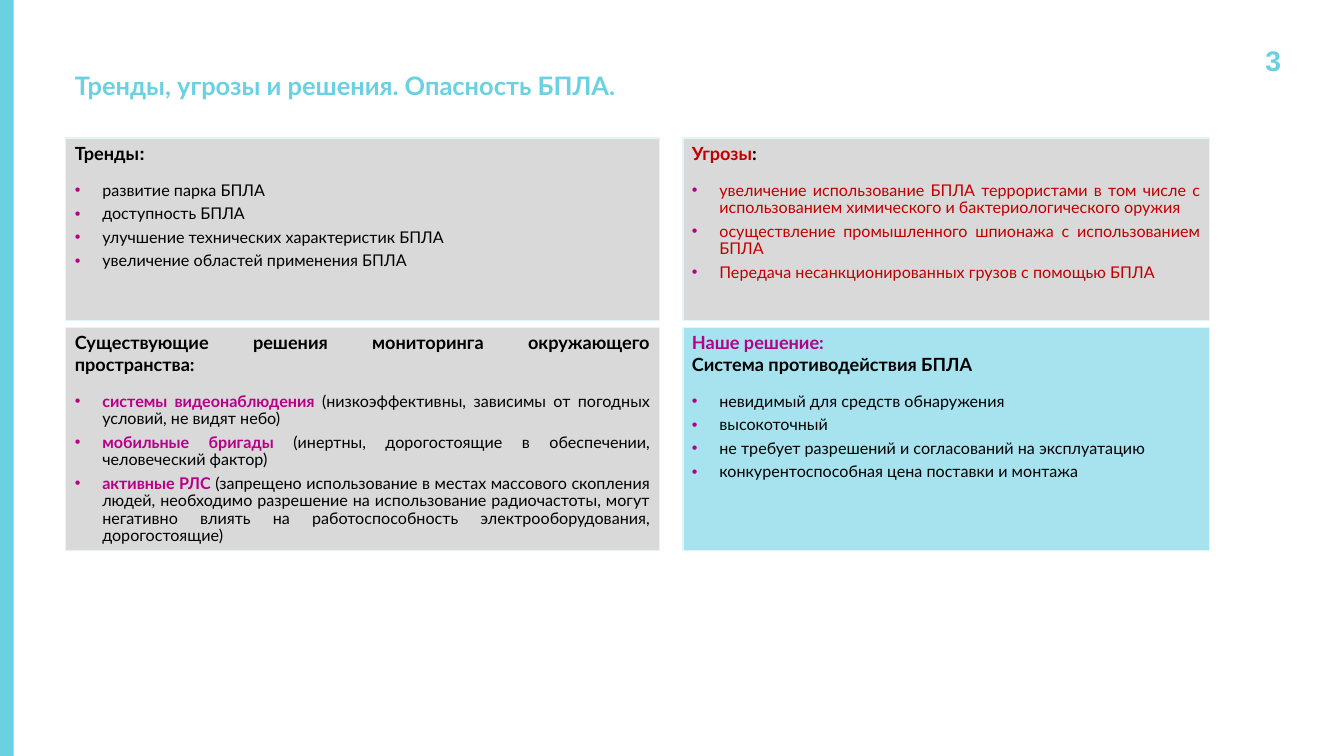
from lxml import etree
from pptx import Presentation
from pptx.dml.color import RGBColor
from pptx.enum import shapes, text
from pptx.oxml.ns import qn
from pptx.util import Inches, Pt

CYAN = RGBColor(0x6A, 0xD1, 0xE2)
LIGHT_CYAN = RGBColor(0xA6, 0xE3, 0xEE)
PALE_CYAN = RGBColor(0xE1, 0xF6, 0xF9)
GREY = RGBColor(0xD9, 0xD9, 0xD9)
MAGENTA = RGBColor(0xB7, 0x00, 0x88)
RED = RGBColor(0xC0, 0x00, 0x00)
BLACK = RGBColor(0, 0, 0)

WIDTH, HEIGHT = 14.7, 8.27
HEADING_SIZE, ITEM_SIZE = 14.3, 12.7
JUSTIFY, LEFT = text.PP_ALIGN.JUSTIFY, text.PP_ALIGN.LEFT

# Columns are (left, width), rows are (top, height)
COLUMNS = [(0.72, 6.49), (7.47, 5.76)]
ROWS = [(1.51, 2), (3.58, 2.44)]

# Each panel: column, row, fill, heading alignment, heading runs, items.
# A run is (words, colour, bold) with an optional font name.
PANELS = [
    (0, 0, GREY, JUSTIFY,
     [("Тренды", BLACK, True), (": ", BLACK, True, "Arial")],
     [[(words, BLACK, False)] for words in (
         "развитие парка БПЛА",
         "доступность БПЛА",
         "улучшение технических характеристик БПЛА",
         "увеличение областей применения БПЛА")]),
    (0, 1, GREY, JUSTIFY,
     [("Существующие решения мониторинга окружающего пространства:",
       BLACK, True)],
     [[(name, MAGENTA, True), (drawback, BLACK, False)]
      for name, drawback in (
         ("системы видеонаблюдения ",
          "(низкоэффективны, зависимы от погодных условий, не видят небо)"),
         ("мобильные бригады",
          " (инертны, дорогостоящие в обеспечении, человеческий фактор)"),
         ("активные РЛС",
          " (запрещено использование в местах массового скопления людей, "
          "необходимо разрешение на использование радиочастоты, могут "
          "негативно влиять на работоспособность электрооборудования, "
          "дорогостоящие)"))]),
    (1, 0, GREY, JUSTIFY,
     [("Угрозы", RED, True), (":", BLACK, True)],
     [[(words, RED, False)] for words in (
         "увеличение использование БПЛА террористами в том числе с "
         "использованием химического и бактериологического оружия",
         "осуществление промышленного шпионажа с использованием БПЛА",
         "Передача несанкционированных грузов с помощью БПЛА")]),
    (1, 1, LIGHT_CYAN, LEFT,
     [("Наше решение: \n", MAGENTA, True),
      ("Система противодействия БПЛА", BLACK, True)],
     [[(words, BLACK, False)] for words in (
         "невидимый для средств обнаружения ",
         "высокоточный",
         "не требует разрешений и согласований на эксплуатацию",
         "конкурентоспособная цена поставки и монтажа")]),
]


def add_span(para, words, size, color, bold=True, font="Lato"):
    """Add one run; a closing newline becomes a line break."""
    span = para.add_run()
    span.text = words.rstrip("\n")
    span.font.size = Pt(size)
    span.font.name = font
    span.font.bold = bold
    span.font.color.rgb = color
    if words.endswith("\n"):
        para.add_line_break()


def add_bullet(para):
    props = para._p.get_or_add_pPr()
    props.set("marL", str(Inches(0.3)))
    props.set("indent", str(-Inches(0.3)))
    color = etree.SubElement(props, qn("a:buClr"))
    etree.SubElement(color, qn("a:srgbClr"), val=str(MAGENTA))
    etree.SubElement(props, qn("a:buFont"), typeface="Arial")
    etree.SubElement(props, qn("a:buChar"), char="•")


def add_rectangle(page, left, top, width, height, fill):
    box = page.shapes.add_shape(
        shapes.MSO_SHAPE.RECTANGLE,
        Inches(left), Inches(top), Inches(width), Inches(height))
    box.shadow.inherit = False
    box.fill.solid()
    box.fill.fore_color.rgb = fill
    return box


def add_side_bar(page):
    bar = add_rectangle(page, 0, 0, 0.15, HEIGHT, CYAN)
    bar.line.fill.background()


def add_title(page, left, top, width, height):
    title = page.shapes.title
    title.left, title.top = Inches(left), Inches(top)
    title.width, title.height = Inches(width), Inches(height)
    frame = title.text_frame
    frame.word_wrap = True
    frame.vertical_anchor = text.MSO_ANCHOR.TOP
    para = frame.paragraphs[0]
    para.alignment = LEFT
    para.line_spacing = 0.9
    para.space_before = Pt(0)
    add_span(para, "Тренды, угрозы и решения. Опасность БПЛА.", 20, CYAN)


def add_page_number(page, left, top, width, height):
    box = page.shapes.add_textbox(
        Inches(left), Inches(top), Inches(width), Inches(height))
    frame = box.text_frame
    frame.word_wrap = True
    frame.vertical_anchor = text.MSO_ANCHOR.MIDDLE
    para = frame.paragraphs[0]
    para.alignment = text.PP_ALIGN.RIGHT
    add_span(para, "3", 22.3, CYAN, font="Arial")


def add_panel(page, column, row, fill, alignment, heading, items):
    (left, width), (top, height) = COLUMNS[column], ROWS[row]
    box = add_rectangle(page, left, top, width, height, fill)
    box.line.color.rgb = PALE_CYAN
    box.line.width = Pt(1)
    frame = box.text_frame
    frame.word_wrap = True
    frame.vertical_anchor = text.MSO_ANCHOR.TOP

    para = frame.paragraphs[0]
    para.alignment = alignment
    para.space_after = Pt(14.3)
    for words, *style in heading:
        add_span(para, words, HEADING_SIZE, *style)

    for item in items:
        para = frame.add_paragraph()
        add_bullet(para)
        para.alignment = JUSTIFY
        para.line_spacing = 0.9
        para.space_after = Pt(4.8)
        for words, *style in item:
            add_span(para, words, ITEM_SIZE, *style)


def main():
    deck = Presentation()
    deck.slide_width, deck.slide_height = Inches(WIDTH), Inches(HEIGHT)
    page = deck.slides.add_slide(deck.slide_layouts.get_by_name("Title Only"))
    add_side_bar(page)
    add_title(page, 0.72, 0.76, 12.2, 0.9)
    add_page_number(page, 13.24, 0.44, 0.87, 0.44)
    for panel in PANELS:
        add_panel(page, *panel)
    deck.save("out.pptx")


if __name__ == "__main__":
    main()
